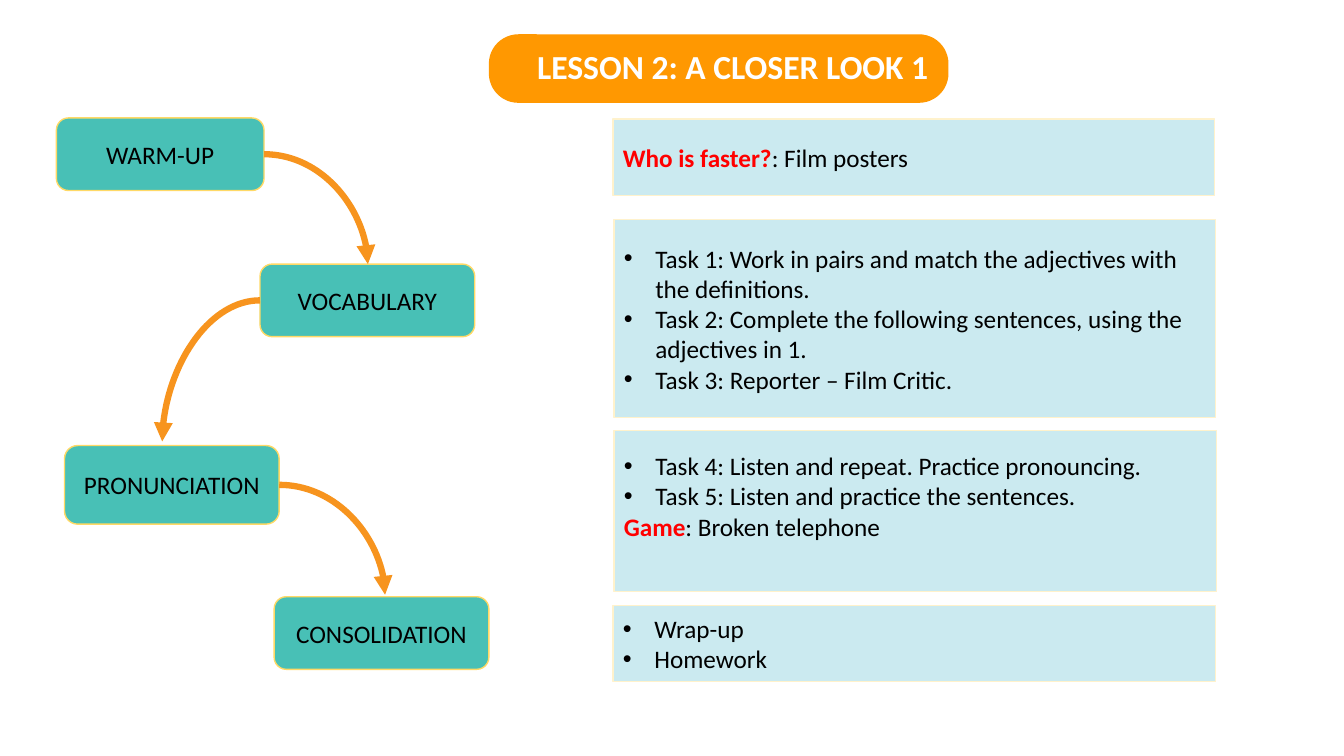
from lxml import etree
from pptx import Presentation
from pptx import util as u
from pptx.dml.color import RGBColor
from pptx.enum import shapes, text
from pptx.oxml import ns

COLORS = {
    "stage": "48C0B6", "stage_line": "FFD966",
    "panel": "CBEAF0", "panel_line": "FFF2CC",
    "banner": "FF9801", "arrow": "F7941E",
    "ink": "000000", "accent": "FF0000", "title": "FFFFFF",
}
UNIT = 0.1
COLUMNS, ROWS = 133.33, 75


class LessonSlide:
    font_name = "Calibri"
    body_size = 18
    title_size = 24
    bullet_indent = 3.13

    def __init__(self, presentation):
        self.slide = presentation.slides.add_slide(presentation.slide_layouts[6])

    def grid(self, *cells):
        return [u.Inches(cell * UNIT) for cell in cells]

    def color(self, name):
        return RGBColor.from_string(COLORS[name])

    def style(self, font, size, color=None, bold=None):
        font.name = self.font_name
        font.size = u.Pt(size)
        font.bold = bold
        if color:
            font.color.rgb = self.color(color)

    def box(self, kind, place, fill, line=None):
        shape = self.slide.shapes.add_shape(kind, *self.grid(*place))
        shape.shadow.inherit = False
        shape.fill.solid()
        shape.fill.fore_color.rgb = self.color(fill)
        if line:
            shape.line.color.rgb = self.color(line)
            shape.line.width = u.Pt(1)
        else:
            shape.line.fill.background()
        frame = shape.text_frame
        frame.word_wrap = True
        frame.vertical_anchor = text.MSO_ANCHOR.MIDDLE
        return shape

    def stage(self, label, place):
        shape = self.box(shapes.MSO_SHAPE.ROUNDED_RECTANGLE, place, "stage", "stage_line")
        paragraph = shape.text_frame.paragraphs[0]
        paragraph.text = label
        paragraph.alignment = text.PP_ALIGN.CENTER
        self.style(paragraph.font, self.body_size, "ink")

    def bullet(self, paragraph):
        properties = paragraph._p.get_or_add_pPr()
        indent, = self.grid(self.bullet_indent)
        properties.set("marL", str(indent))
        properties.set("indent", str(-indent))
        bullet_color = etree.SubElement(properties, ns.qn("a:buClr"))
        etree.SubElement(bullet_color, ns.qn("a:srgbClr"), val=COLORS["ink"])
        etree.SubElement(properties, ns.qn("a:buFont"), typeface="Arial")
        etree.SubElement(properties, ns.qn("a:buChar"), char="•")

    def panel(self, place, lines, bottom_inset=0.5):
        shape = self.box(shapes.MSO_SHAPE.RECTANGLE, place, "panel", "panel_line")
        frame = shape.text_frame
        frame.margin_bottom, = self.grid(bottom_inset)
        for index, (lead, body) in enumerate(lines):
            paragraph = frame.add_paragraph() if index else frame.paragraphs[0]
            paragraph.alignment = text.PP_ALIGN.LEFT
            if lead:
                self.style(paragraph.font, self.body_size)
                for words, color, bold in ((lead, "accent", True), (body, "ink", False)):
                    run = paragraph.add_run()
                    run.text = words
                    run.font.bold = bold
                    run.font.color.rgb = self.color(color)
            else:
                self.bullet(paragraph)
                paragraph.text = body
                self.style(paragraph.font, self.body_size, "ink")

    def banner(self, place, rounding):
        shape = self.box(shapes.MSO_SHAPE.ROUNDED_RECTANGLE, place, "banner")
        shape.adjustments[0] = rounding

    def title(self, words, place):
        frame = self.slide.shapes.add_textbox(*self.grid(*place)).text_frame
        frame.word_wrap = True
        frame.auto_size = text.MSO_AUTO_SIZE.SHAPE_TO_FIT_TEXT
        paragraph = frame.paragraphs[0]
        paragraph.text = words
        self.style(paragraph.font, self.title_size, "title", True)

    def arrow(self, start, end):
        connector = self.slide.shapes.add_connector(
            shapes.MSO_CONNECTOR.CURVE, *self.grid(*start, *end))
        connector.line.color.rgb = self.color("arrow")
        connector.line.width = u.Pt(4.5)
        properties = connector._element.spPr
        properties.find(ns.qn("a:prstGeom")).set("prst", "curvedConnector2")
        etree.SubElement(connector.line._get_or_add_ln(), ns.qn("a:tailEnd"), type="triangle")
        etree.SubElement(properties, ns.qn("a:effectLst"))


STAGES = [
    ("WARM-UP", (5.6, 11.7, 20.6, 7.2)),
    ("VOCABULARY", (25.8, 26.2, 21.3, 7.2)),
    ("PRONUNCIATION", (6.4, 44.2, 21.3, 7.8)),
    ("CONSOLIDATION", (27.2, 59.2, 21.3, 7.2)),
]
PANELS = [
    ((60.8, 11.8, 59.7, 7.6), [("Who is faster?", ": Film posters")], 0.5),
    ((60.9, 21.8, 59.7, 19.6), [
        (None, "Task 1: Work in pairs and match the adjectives with the definitions."),
        (None, "Task 2: Complete the following sentences, using the adjectives in 1."),
        (None, "Task 3: Reporter – Film Critic."),
    ], 0.5),
    ((60.9, 42.7, 59.8, 16), [
        (None, "Task 4: Listen and repeat. Practice pronouncing."),
        (None, "Task 5: Listen and practice the sentences."),
        ("Game", ": Broken telephone"),
    ], 3.5),
    ((60.8, 60.1, 59.8, 7.5), [(None, "Wrap-up"), (None, "Homework")], 0.5),
]
ARROWS = [
    ((26.2, 15.3), (36.5, 26.2)),
    ((25.8, 29.8), (16.1, 43.8)),
    ((27.7, 48.1), (38.2, 59)),
]


def main():
    presentation = Presentation()
    presentation.slide_width = u.Inches(COLUMNS * UNIT)
    presentation.slide_height = u.Inches(ROWS * UNIT)
    lesson = LessonSlide(presentation)
    for label, place in STAGES:
        lesson.stage(label, place)
    for place, lines, bottom_inset in PANELS:
        lesson.panel(place, lines, bottom_inset)
    lesson.banner((48.5, 3.4, 45.6, 6.8), 0.43)
    lesson.title("LESSON 2: A CLOSER LOOK 1", (52.3, 4.1, 49.9, 5))
    for start, end in ARROWS:
        lesson.arrow(start, end)
    presentation.save("out.pptx")


if __name__ == "__main__":
    main()
